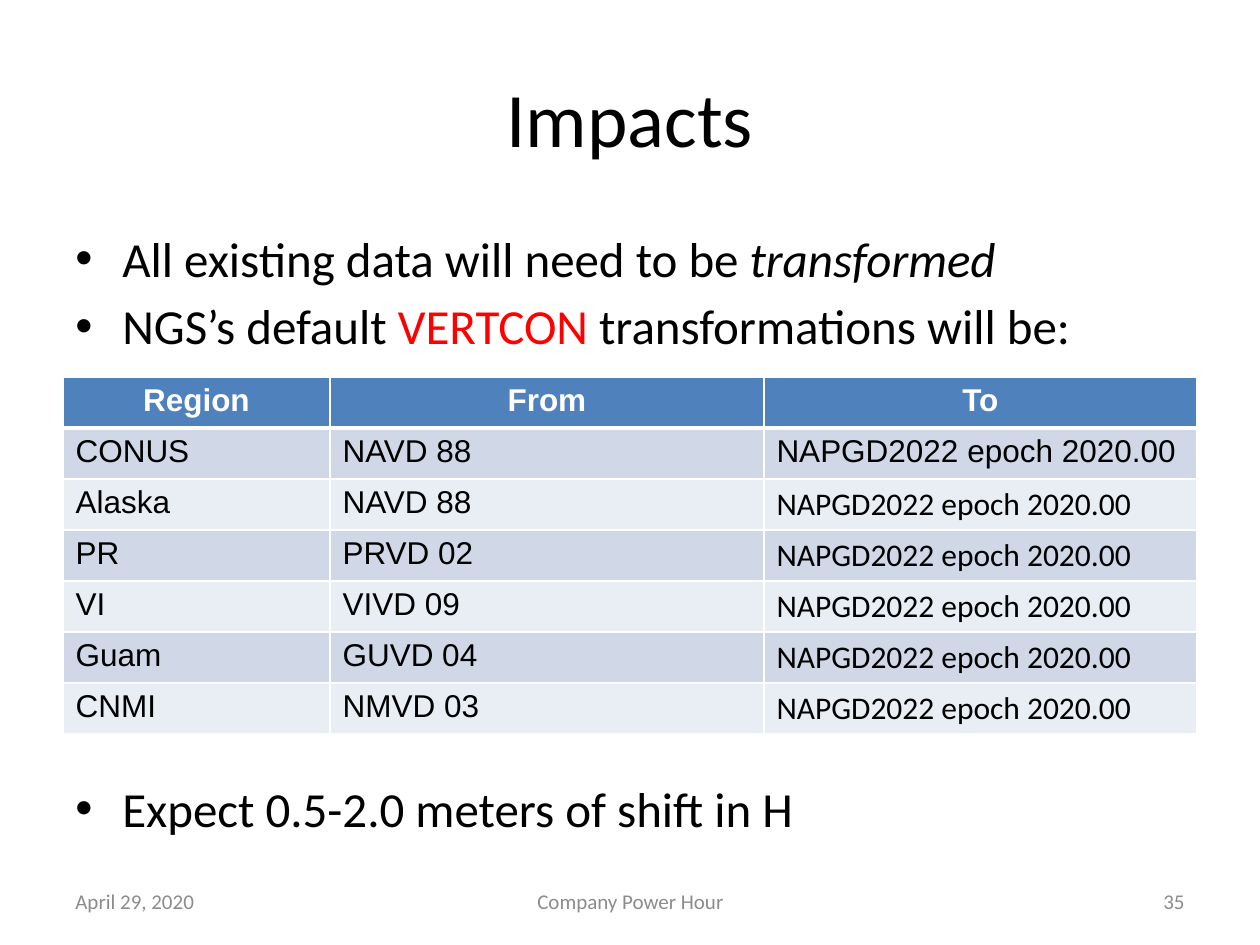
from dataclasses import dataclass

import pptx
import pptx.dml.color
import pptx.enum.text
import pptx.oxml
import pptx.oxml.ns
import pptx.util

EMU_PER_PX = 914400 / 126
ALIGN = pptx.enum.text.PP_ALIGN
ANCHOR = pptx.enum.text.MSO_ANCHOR


@dataclass(frozen=True)
class Theme:
    body_font: str = "Calibri"
    table_font: str = "Arial"
    black: str = "000000"
    white: str = "FFFFFF"
    red: str = "FF0000"
    gray: str = "8C8C8C"
    header: str = "4F81BD"
    bands: tuple[str, str] = ("D0D8E8", "E9EDF4")
    title_size: int = 44
    body_size: int = 28
    table_size: int = 18
    footer_size: int = 12


THEME = Theme()


@dataclass(frozen=True)
class Box:
    x: int
    y: int
    w: int
    h: int


@dataclass(frozen=True)
class Label:
    text: str
    box: Box
    size: int
    color: str
    align: ALIGN


@dataclass(frozen=True)
class Piece:
    text: str
    color: str = THEME.black
    italic: bool = False


LABELS = [
    Label("Impacts", Box(63, 38, 1134, 157), THEME.title_size, THEME.black, ALIGN.CENTER),
    Label("April 29, 2020", Box(63, 876, 294, 50), THEME.footer_size, THEME.gray, ALIGN.LEFT),
    Label("Company Power Hour", Box(431, 876, 399, 50), THEME.footer_size, THEME.gray, ALIGN.CENTER),
    Label("35", Box(903, 876, 294, 50), THEME.footer_size, THEME.gray, ALIGN.RIGHT),
]
INTRO = [
    [Piece("All existing data will need to be "), Piece("transformed", italic=True)],
    [Piece("NGS’s default "), Piece("VERTCON", THEME.red), Piece(" transformations will be:")],
]
OUTLOOK = [[Piece("Expect 0.5-2.0 meters of shift in H")]]

HEADINGS = ("Region", "From", "To")
DATUMS = [
    ("CONUS", "NAVD 88"),
    ("Alaska", "NAVD 88"),
    ("PR", "PRVD 02"),
    ("VI", "VIVD 09"),
    ("Guam", "GUVD 04"),
    ("CNMI", "NMVD 03"),
]
NEW_DATUM = "NAPGD2022 epoch 2020.00"
COLUMN_WIDTHS = (267, 434, 433)
ROW_HEIGHT = 51


def px(n: int) -> int:
    return round(n * EMU_PER_PX)


def place(box: Box) -> tuple[int, int, int, int]:
    return px(box.x), px(box.y), px(box.w), px(box.h)


def style(font, name: str, size: int, color: str, bold: bool = False) -> None:
    font.name = name
    font.size = pptx.util.Pt(size)
    font.bold = bold
    font.color.rgb = pptx.dml.color.RGBColor.from_string(color)


def add_label(slide, label: Label) -> None:
    tf = slide.shapes.add_textbox(*place(label.box)).text_frame
    tf.word_wrap = True
    tf.vertical_anchor = ANCHOR.MIDDLE
    tf.text = label.text
    p = tf.paragraphs[0]
    p.alignment = label.align
    style(p.runs[0].font, THEME.body_font, label.size, label.color)


def add_bullet(p) -> None:
    pPr = p._p.get_or_add_pPr()
    pPr.set("marL", str(px(47)))
    pPr.set("indent", str(-px(47)))
    ns = pptx.oxml.ns.nsdecls("a")
    pPr.append(pptx.oxml.parse_xml(f'<a:buFont {ns} typeface="Arial"/>'))
    pPr.append(pptx.oxml.parse_xml(f'<a:buChar {ns} char="•"/>'))


def add_bullets(slide, box: Box, items: list[list[Piece]]) -> None:
    tf = slide.shapes.add_textbox(*place(box)).text_frame
    tf.word_wrap = True
    for i, pieces in enumerate(items):
        p = tf.add_paragraph() if i else tf.paragraphs[0]
        add_bullet(p)
        if i:
            p.space_before = pptx.util.Pt(5)
        for piece in pieces:
            r = p.add_run()
            r.text = piece.text
            style(r.font, THEME.body_font, THEME.body_size, piece.color)
            r.font.italic = piece.italic


def set_borders(cell, top: int, bottom: int) -> None:
    """Draw white borders; top and bottom widths are in points."""
    tcPr = cell._tc.get_or_add_tcPr()
    ns = pptx.oxml.ns.nsdecls("a")
    for i, (side, width) in enumerate((("L", 1), ("R", 1), ("T", top), ("B", bottom))):
        tcPr.insert(i, pptx.oxml.parse_xml(
            f'<a:ln{side} {ns} w="{pptx.util.Pt(width)}"><a:solidFill>'
            f'<a:srgbClr val="{THEME.white}"/></a:solidFill></a:ln{side}>'))


def add_datum_table(slide, x: int, y: int) -> None:
    rows = [HEADINGS] + [(*datum, NEW_DATUM) for datum in DATUMS]
    box = Box(x, y, sum(COLUMN_WIDTHS), ROW_HEIGHT * len(rows))
    table = slide.shapes.add_table(len(rows), len(HEADINGS), *place(box)).table
    for column, width in zip(table.columns, COLUMN_WIDTHS):
        column.width = px(width)
    for i, texts in enumerate(rows):
        table.rows[i].height = px(ROW_HEIGHT)
        is_header = i == 0
        fill = THEME.header if is_header else THEME.bands[(i - 1) % 2]
        for j, text in enumerate(texts):
            cell = table.cell(i, j)
            cell.text = text
            cell.fill.solid()
            cell.fill.fore_color.rgb = pptx.dml.color.RGBColor.from_string(fill)
            set_borders(cell, top=3 if i == 1 else 1, bottom=3 if is_header else 1)
            p = cell.text_frame.paragraphs[0]
            p.alignment = ALIGN.CENTER if is_header else ALIGN.LEFT
            font = THEME.body_font if i > 1 and j == 2 else THEME.table_font
            color = THEME.white if is_header else THEME.black
            style(p.runs[0].font, font, THEME.table_size, color, bold=is_header)


def main() -> None:
    prs = pptx.Presentation()
    prs.slide_width, prs.slide_height = px(1260), px(945)
    slide = prs.slides.add_slide(prs.slide_layouts[6])
    for label in LABELS:
        add_label(slide, label)
    add_bullets(slide, Box(63, 222, 1134, 145), INTRO)
    add_bullets(slide, Box(63, 772, 1134, 72), OUTLOOK)
    add_datum_table(slide, 63, 377)
    prs.save("out.pptx")


if __name__ == "__main__":
    main()
